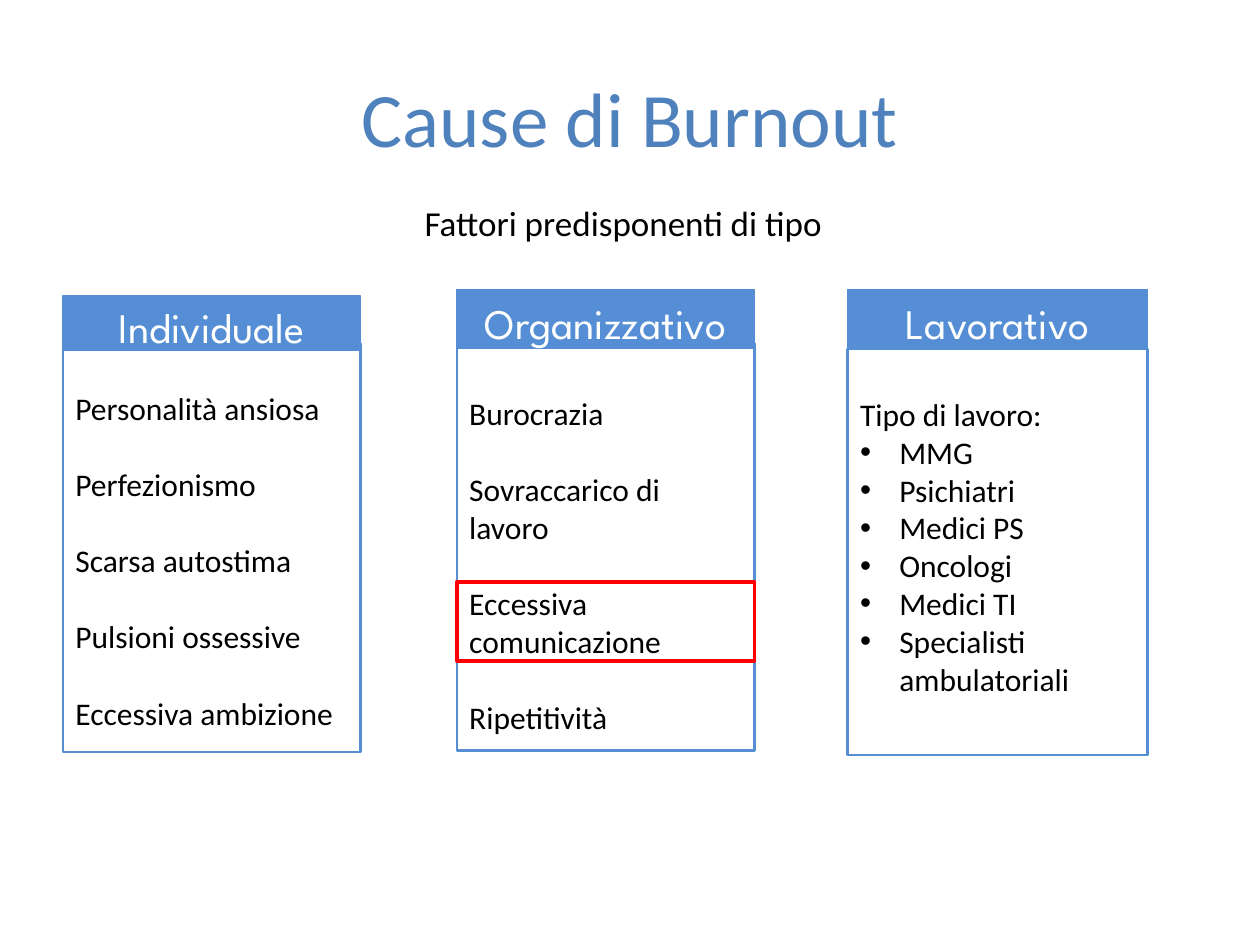
"""Build the slide on the causes of burnout, with three columns of predisposing factors."""
from lxml import etree
from pptx import Presentation
from pptx.dml.color import RGBColor
from pptx.enum.shapes import MSO_SHAPE
from pptx.enum.text import MSO_ANCHOR, PP_ALIGN
from pptx.oxml.ns import qn
from pptx.util import Cm, Pt

RECTANGLE = MSO_SHAPE.RECTANGLE
MIDDLE = MSO_ANCHOR.MIDDLE
CENTER = PP_ALIGN.CENTER
BLUE, RED, BLACK, WHITE = "558ED5", "FF0000", "000000", "FFFFFF"
LINE_GAP = Pt(22)
BULLET_INDENT = Cm(0.79)


def add_run(paragraph, text, size, color, font="Calibri"):
    run = paragraph.add_run()
    run.text = text
    run.font.size = Pt(size)
    run.font.name = font
    run.font.color.rgb = RGBColor.from_string(color)


def add_box(left, top, width, height, line, weight, fill=None):
    box = slide.shapes.add_shape(RECTANGLE, Cm(left), Cm(top), Cm(width), Cm(height))
    box.shadow.inherit = False
    box.line.color.rgb = RGBColor.from_string(line)
    box.line.width = Pt(weight)
    if fill:
        box.fill.solid()
        box.fill.fore_color.rgb = RGBColor.from_string(fill)
    else:
        box.fill.background()
    return box


prs = Presentation()
prs.slide_width, prs.slide_height = Cm(25.4), Cm(19.05)
slide = prs.slides.add_slide(prs.slide_layouts[5])

title = slide.shapes.title
title.left, title.top, title.width, title.height = Cm(1.27), Cm(0.76), Cm(22.86), Cm(3.18)
title.text_frame.vertical_anchor = MIDDLE
title_line = title.text_frame.paragraphs[0]
title_line.alignment = CENTER
add_run(title_line, "Cause di Burnout", 44, "4F81BD")

subtitle = slide.shapes.add_textbox(Cm(8.31), Cm(3.94), Cm(8.64), Cm(1.12))
subtitle.text_frame.word_wrap = False
add_run(subtitle.text_frame.paragraphs[0], "Fattori predisponenti di tipo", 20, BLACK)

columns = [
    ("Individuale", 1.27, 6, (5.97, 1.09), (6.93, 8.23), (7.71, 7.19), False,
     ["Personalità ansiosa", "Perfezionismo", "Scarsa autostima",
      "Pulsioni ossessive", "Eccessiva ambizione"]),
    ("Organizzativo", 9.21, 6, (5.84, 1.19), (6.93, 8.2), (7.81, 7.19), False,
     ["Burocrazia", "Sovraccarico di lavoro", "Eccessiva comunicazione", "Ripetitività"]),
    ("Lavorativo", 17.09, 6.05, (5.84, 1.19), (7.04, 8.18), (7.84, 6.43), True,
     ["Tipo di lavoro:", "MMG", "Psichiatri", "Medici PS", "Oncologi",
      "Medici TI", "Specialisti ambulatoriali"]),
]

for heading, left, width, header_span, frame_span, list_span, bulleted, factors in columns:
    add_box(left, frame_span[0], width, frame_span[1], BLUE, 1.5)

    header = add_box(left, header_span[0], width, header_span[1], BLUE, 0.75, BLUE)
    header_text = header.text_frame
    header_text.margin_left = header_text.margin_right = Cm(0.25)
    header_text.margin_top = header_text.margin_bottom = Cm(0.25)
    header_text.vertical_anchor = MIDDLE
    header_line = header_text.paragraphs[0]
    header_line.alignment = CENTER
    header_line.line_spacing = 1.15
    add_run(header_line, heading, 24, WHITE, "League Spartan")

    factor_list = slide.shapes.add_textbox(Cm(left), Cm(list_span[0]), Cm(width), Cm(list_span[1]))
    factor_text = factor_list.text_frame
    factor_text.word_wrap = True
    for index, factor in enumerate(factors):
        paragraph = factor_text.add_paragraph() if index else factor_text.paragraphs[0]
        add_run(paragraph, factor, 18, BLACK)
        if not bulleted and index < len(factors) - 1:
            paragraph.space_after = LINE_GAP
        if bulleted and index:
            properties = paragraph._p.get_or_add_pPr()
            properties.set("marL", str(BULLET_INDENT))
            properties.set("indent", str(-BULLET_INDENT))
            etree.SubElement(properties, qn("a:buFont")).set("typeface", "Arial")
            etree.SubElement(properties, qn("a:buChar")).set("char", "•")

add_box(9.21, 11.73, 6, 1.6, RED, 2)

prs.save("out.pptx")
